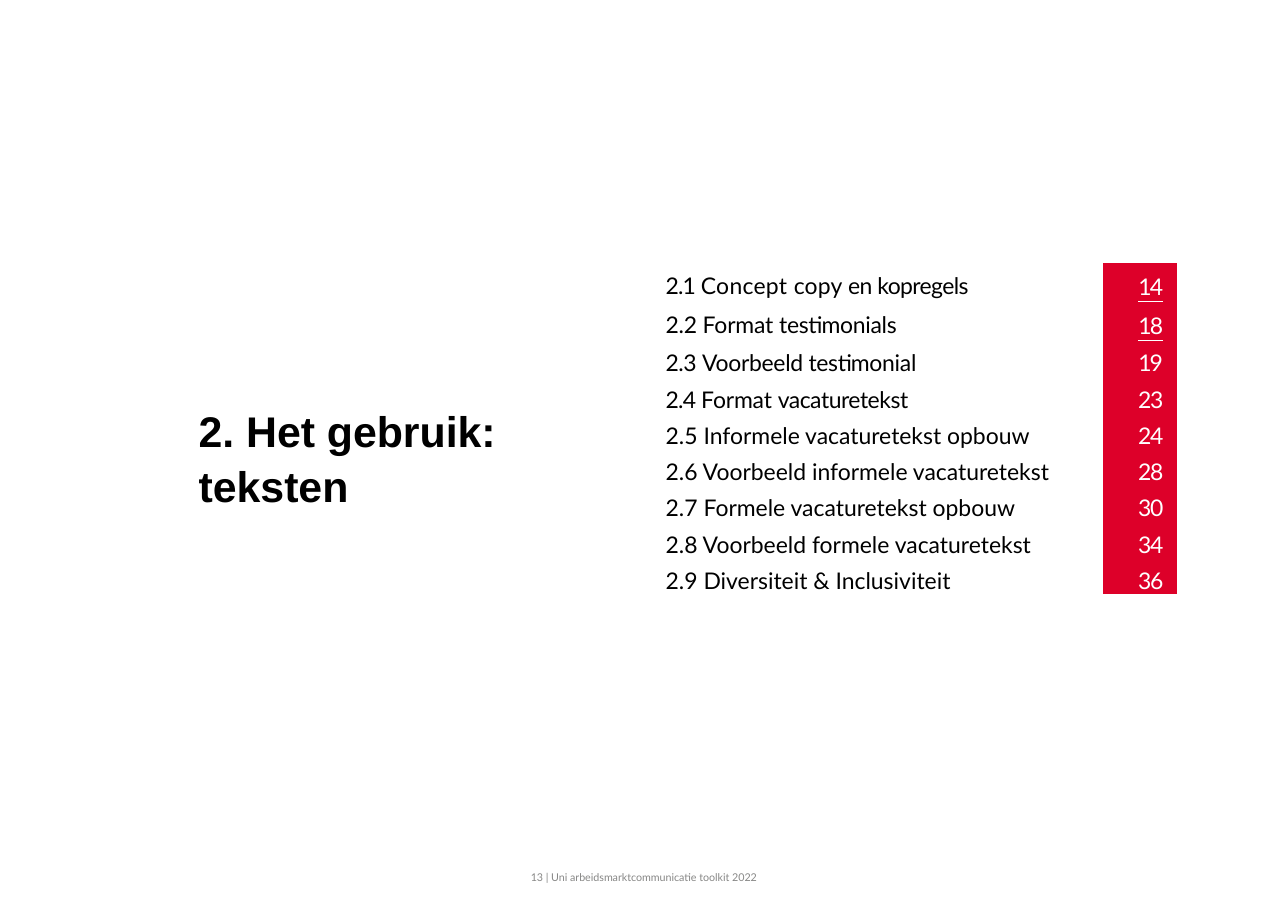
from pptx import Presentation
from pptx import util as u
from pptx.dml import color
from pptx.enum import text

COLOURS = {"black": "000000", "white": "FFFFFF", "red": "DD0029", "grey": "878786"}
NO_STYLE = "{2D5ABB26-0587-4C30-8999-92F81FD0307C}"

# Each row: spans with their letter spacing in points, page number, its spacing
CONTENTS = [
    ([("2.1 ", -0.6), ("Concept ", 0.2), ("copy ", 0.1), ("en ", -0.5),
      ("kopregels", -0.4)], "14", -1.1),
    ([("2.2 ", -0.2), ("Format ", -0.1), ("testimonials", -0.2)], "18", -1.2),
    ([("2.3 ", -0.3), ("Voorbeeld testimonial", -0.2)], "19", -1.3),
    ([("2.4 ", -0.5), ("Format ", -0.1), ("vacaturetekst", -0.3)], "23", -0.8),
    ([("2.5 Informele vacaturetekst opbouw", 0)], "24", -0.8),
    ([("2.6 Voorbeeld informele vacaturetekst", 0)], "28", -0.8),
    ([("2.7 Formele vacaturetekst opbouw", 0)], "30", -0.8),
    ([("2.8 Voorbeeld formele vacaturetekst", 0)], "34", -0.8),
    ([("2.9 Diversiteit & Inclusiviteit", 0)], "36", -0.8),
]


def rgb(name):
    return color.RGBColor.from_string(COLOURS[name])


def style_span(span, size, font, colour, bold=False, spacing=0):
    span.font.size = u.Pt(size)
    span.font.name = font
    span.font.bold = bold
    span.font.color.rgb = rgb(colour)
    if spacing:
        span._r.get_or_add_rPr().set("spc", str(round(spacing * 100)))


def fit_frame(frame, left_margin, space_before):
    """Set tight margins and a left-aligned, growing text frame."""
    frame.margin_left, frame.margin_top = u.Cm(left_margin), u.Cm(0.03)
    frame.margin_right = frame.margin_bottom = 0
    frame.word_wrap = True
    frame.auto_size = text.MSO_AUTO_SIZE.SHAPE_TO_FIT_TEXT
    frame.vertical_anchor = text.MSO_ANCHOR.TOP
    para = frame.paragraphs[0]
    para.alignment = text.PP_ALIGN.LEFT
    para.space_before = u.Pt(space_before)
    return para


def add_heading(page, left, top, width, height):
    title = page.shapes.title
    title.left, title.top = u.Cm(left), u.Cm(top)
    title.width, title.height = u.Cm(width), u.Cm(height)
    title.text_frame.text = "2. Het gebruik: teksten"
    para = fit_frame(title.text_frame, 0.03, 1)
    para.line_spacing = 1.05
    style_span(para.runs[0], 28, "Arial", "black", bold=True)


def fill_cell(cell, spans, colour, left_margin):
    cell.margin_left, cell.margin_top = u.Cm(left_margin), u.Cm(0.2)
    cell.margin_right = cell.margin_bottom = 0
    para = cell.text_frame.paragraphs[0]
    para.space_before = u.Pt(2.5)
    for words, spacing in spans:
        span = para.add_run()
        span.text = words
        style_span(span, 15, "Lato", colour, spacing=spacing)
    return para


def add_contents(page, left, top, width, height):
    frame = page.shapes.add_table(len(CONTENTS), 2, u.Cm(left), u.Cm(top),
                                  u.Cm(width), u.Cm(height))
    table = frame.table
    table.first_row = table.horz_banding = False
    table._tbl.tblPr[0].text = NO_STYLE
    number_width = 1.7
    table.columns[0].width = u.Cm(width - number_width)
    table.columns[1].width = u.Cm(number_width)

    for index, (spans, number, spacing) in enumerate(CONTENTS):
        table.rows[index].height = u.Cm(0.89 if index < 2 else 0.79)
        # Chapter name
        name_cell = table.cell(index, 0)
        name_cell.fill.background()
        fill_cell(name_cell, spans, "black", 0.08)
        # Page number
        number_cell = table.cell(index, 1)
        number_cell.fill.solid()
        number_cell.fill.fore_color.rgb = rgb("red")
        number_cell.vertical_anchor = text.MSO_ANCHOR.MIDDLE
        para = fill_cell(number_cell, [(number, spacing)], "white", 0.51)
        para.alignment = text.PP_ALIGN.CENTER
        para.runs[0].font.underline = True


def add_footer(page, left, top, width, height):
    box = page.shapes.add_textbox(u.Cm(left), u.Cm(top), u.Cm(width), u.Cm(height))
    box.text_frame.text = "13 | Uni arbeidsmarktcommunicatie toolkit 2022"
    para = fit_frame(box.text_frame, 0.1, 0.8)
    style_span(para.runs[0], 7, "Lato", "grey")


def main():
    deck = Presentation()
    deck.slide_width, deck.slide_height = u.Cm(29.7), u.Cm(21)
    page = deck.slides.add_slide(deck.slide_layouts[5])
    add_footer(page, 12.14, 20.04, 5.44, 0.33)
    add_heading(page, 4.55, 9.25, 9.55, 1.24)
    add_contents(page, 15.27, 6.07, 11.86, 7.6)
    deck.save("out.pptx")


if __name__ == "__main__":
    main()
